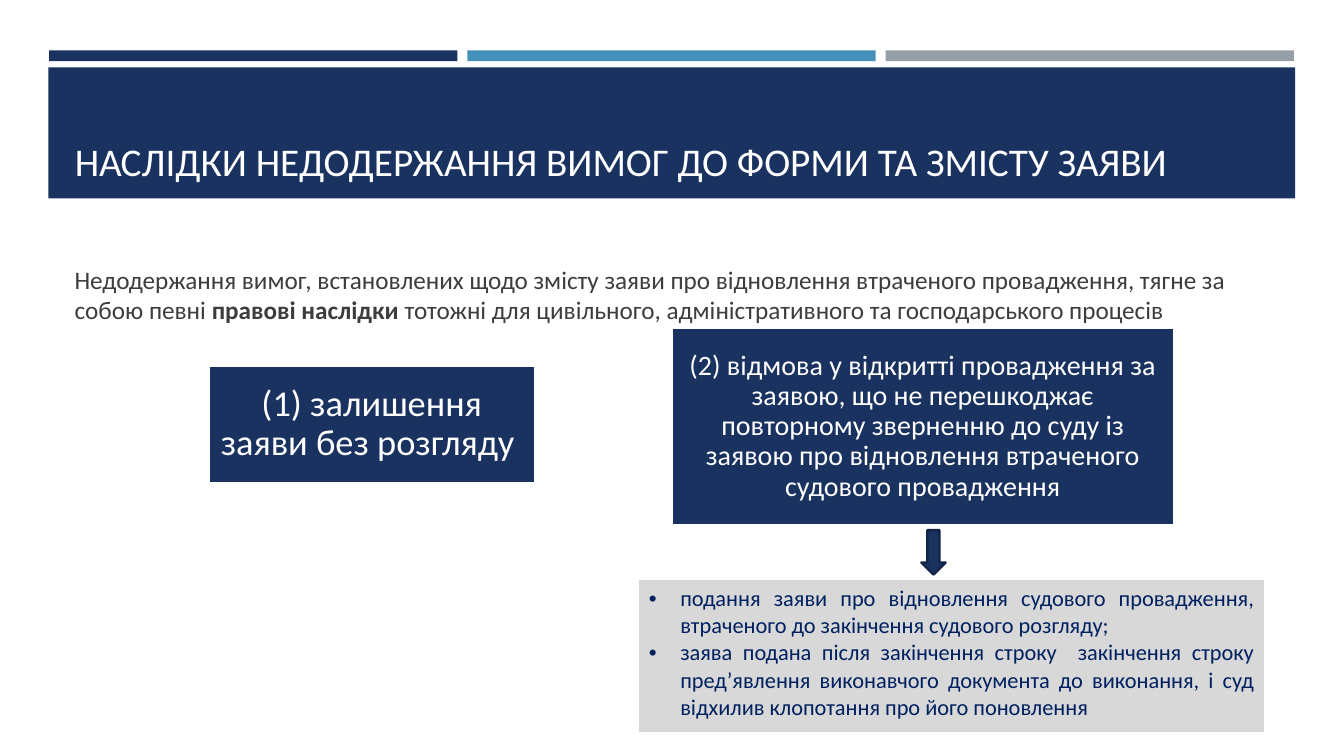
from lxml.etree import SubElement
from pptx import Presentation
from pptx.dml.color import RGBColor
from pptx.enum.shapes import MSO_SHAPE
from pptx.enum.text import MSO_ANCHOR, MSO_AUTO_SIZE, PP_ALIGN
from pptx.oxml.ns import qn
from pptx.util import Cm, Pt

COLORS = {
    "navy": "1A3260", "blue": "4590B8", "gray": "969FA7", "white": "FFFFFF",
    "text": "3D3D3D", "outline": "132547", "cell": "D8D8D8", "list": "002060",
}
TITLE = "НАСЛІДКИ НЕДОДЕРЖАННЯ ВИМОГ ДО ФОРМИ ТА ЗМІСТУ ЗАЯВИ"
INTRO = [
    ("Недодержання вимог, встановлених щодо змісту заяви про відновлення "
     "втраченого провадження, тягне за собою певні ", False),
    ("правові наслідки ", True),
    ("тотожні для цивільного, адміністративного та господарського процесів", False),
]
# text, font size, inset, left, top, width, height
CONSEQUENCES = [
    ("(1) залишення заяви без розгляду ", 26, 0.28, 5.26, 9.22, 8.23, 2.95),
    ("(2) відмова у відкритті провадження за заявою, що не перешкоджає "
     "повторному зверненню до суду із заявою про відновлення втраченого "
     "судового провадження", 20, 0.2, 16.92, 8.26, 12.67, 4.98),
]
GROUNDS = [
    "подання заяви про відновлення судового провадження, втраченого до "
    "закінчення судового розгляду; ",
    "заява подана після закінчення строку  закінчення строку пред’явлення "
    "виконавчого документа до виконання, і суд відхилив клопотання про його "
    "поновлення",
]


def rgb(name):
    return RGBColor.from_string(COLORS[name])


def set_format(obj, values):
    for name, value in values.items():
        setattr(obj, name, value)


def place(sp, left, top, width, height):
    set_format(sp, {"left": Cm(left), "top": Cm(top),
                    "width": Cm(width), "height": Cm(height)})


def add_run(p, text, size, color, bold=False):
    r = p.add_run()
    r.text = text
    set_format(r.font, {"name": "Calibri", "size": Pt(size), "bold": bold})
    r.font.color.rgb = rgb(color)


def add_block(s, kind, box, fill, line=None):
    sp = s.shapes.add_shape(kind, *map(Cm, box))
    sp.shadow.inherit = False
    sp.fill.solid()
    sp.fill.fore_color.rgb = rgb(fill)
    if line:
        sp.line.color.rgb = rgb(line)
        sp.line.width = Pt(1.75)
    else:
        sp.line.fill.background()
    return sp


def add_header(s):
    for i, color in enumerate(("navy", "blue", "gray")):
        add_block(s, MSO_SHAPE.RECTANGLE, (1.24 + i * 10.54, 1.27, 10.29, 0.27), color)
    band = add_block(s, MSO_SHAPE.RECTANGLE, (1.22, 1.7, 31.42, 3.3), "navy")
    title = s.shapes.title
    band.element.addnext(title.element)
    place(title, 1.63, 1.96, 30.63, 2.82)
    tf = title.text_frame
    set_format(tf, {"word_wrap": True, "auto_size": MSO_AUTO_SIZE.NONE,
                    "vertical_anchor": MSO_ANCHOR.BOTTOM})
    p = tf.paragraphs[0]
    p.alignment = PP_ALIGN.LEFT
    add_run(p, TITLE, 28, "white")


def add_intro(s):
    tf = s.shapes.add_textbox(Cm(1.63), Cm(6.53), Cm(30.63), Cm(1.8)).text_frame
    tf.word_wrap = True
    for text, bold in INTRO:
        add_run(tf.paragraphs[0], text, 18, "text", bold)


def add_consequence(s, text, size, inset, *box):
    tf = add_block(s, MSO_SHAPE.RECTANGLE, box, "navy", "white").text_frame
    set_format(tf, {"word_wrap": True, "vertical_anchor": MSO_ANCHOR.MIDDLE})
    set_format(tf, {f"margin_{side}": Cm(inset)
                    for side in ("left", "top", "right", "bottom")})
    p = tf.paragraphs[0]
    set_format(p, {"alignment": PP_ALIGN.CENTER, "line_spacing": 0.9})
    add_run(p, text, size, "white")


def set_bullet(p):
    pPr = p._p.get_or_add_pPr()
    indent = Cm(0.79)
    pPr.set("marL", str(indent))
    pPr.set("indent", str(-indent))
    SubElement(pPr, qn("a:buFont")).set("typeface", "Arial")
    SubElement(pPr, qn("a:buChar")).set("char", "•")


def add_grounds(s):
    box = map(Cm, (16.1, 14.61, 15.77, 3.86))
    cell = s.shapes.add_table(1, 1, *box).table.cell(0, 0)
    cell.fill.solid()
    cell.fill.fore_color.rgb = rgb("cell")
    tf = cell.text_frame
    for i, text in enumerate(GROUNDS):
        p = tf.add_paragraph() if i else tf.paragraphs[0]
        p.alignment = PP_ALIGN.JUSTIFY
        set_bullet(p)
        add_run(p, text, 16, "list")


def main():
    prs = Presentation()
    set_format(prs, {"slide_width": Cm(33.87), "slide_height": Cm(19.05)})
    s = prs.slides.add_slide(prs.slide_layouts[5])
    add_header(s)
    add_intro(s)
    for consequence in CONSEQUENCES:
        add_consequence(s, *consequence)
    add_grounds(s)
    add_block(s, MSO_SHAPE.DOWN_ARROW, (23.22, 13.36, 0.61, 1.12), "navy", "outline")
    prs.save("out.pptx")


if __name__ == "__main__":
    main()
